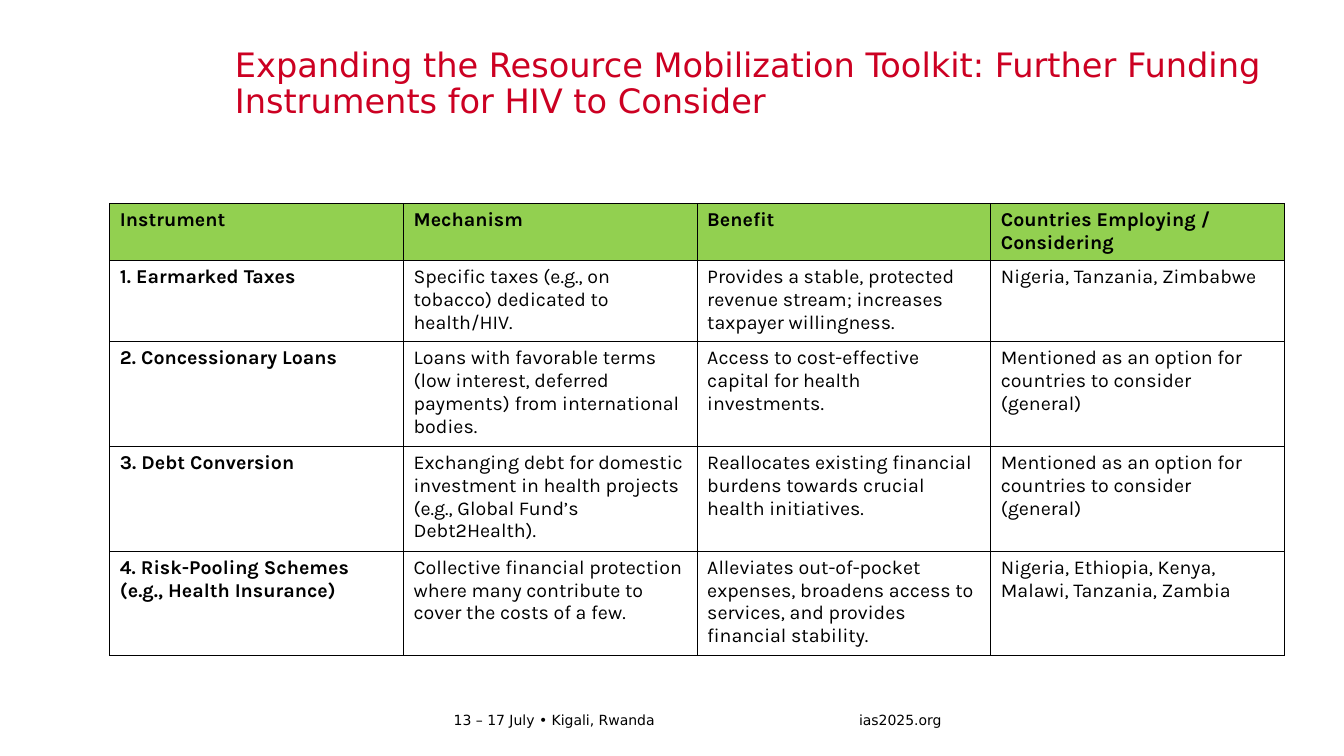
from lxml import etree
from pptx import Presentation
from pptx.dml.color import RGBColor
from pptx.enum.text import MSO_ANCHOR
from pptx.oxml.ns import qn
from pptx.util import Pt

PX = 9144  # 100 px to the inch
TOP, MIDDLE = MSO_ANCHOR.TOP, MSO_ANCHOR.MIDDLE
COLORS = {"title": "CC0022", "text": "000000", "head": "92D050", "line": "000000"}
SANS, KARLA = "DejaVu Sans", "Karla"
BORDER = Pt(0.75)

ROWS = [
    ("Instrument", "Mechanism", "Benefit", "Countries Employing / Considering"),
    ("1. Earmarked Taxes",
     "Specific taxes (e.g., on tobacco) dedicated to health/HIV.",
     "Provides a stable, protected revenue stream; increases taxpayer willingness.",
     "Nigeria, Tanzania, Zimbabwe"),
    ("2. Concessionary Loans",
     "Loans with favorable terms (low interest, deferred payments) from international bodies.",
     "Access to cost-effective capital for health investments.",
     "Mentioned as an option for countries to consider (general)"),
    ("3. Debt Conversion",
     "Exchanging debt for domestic investment in health projects "
     "(e.g., Global Fund’s Debt2Health).",
     "Reallocates existing financial burdens towards crucial health initiatives.",
     "Mentioned as an option for countries to consider (general)"),
    ("4. Risk-Pooling Schemes (e.g., Health Insurance)",
     "Collective financial protection where many contribute to cover the costs of a few.",
     "Alleviates out-of-pocket expenses, broadens access to services, "
     "and provides financial stability.",
     "Nigeria, Ethiopia, Kenya, Malawi, Tanzania, Zambia"),
]
HEIGHTS = (56, 78, 104, 104, 104)


def scale(*sizes):
    return [size * PX for size in sizes]


def style(para, face, size, color, bold=False):
    font = para.font
    font.name, font.size, font.bold = face, Pt(size), bold
    font.color.rgb = RGBColor.from_string(COLORS[color])


def add_text(slide, box, text, size, color, anchor):
    frame = slide.shapes.add_textbox(*scale(*box)).text_frame
    frame.word_wrap = True
    frame.vertical_anchor = anchor
    frame.margin_left = frame.margin_right = 0
    frame.margin_top = frame.margin_bottom = 0
    para = frame.paragraphs[0]
    para.text = text
    style(para, SANS, size, color)
    return para


def add_title(slide, box):
    para = add_text(slide, box,
                    "Expanding the Resource Mobilization Toolkit: "
                    "Further Funding Instruments for HIV to Consider",
                    24, "title", TOP)
    para.line_spacing = 0.9


def add_footer(slide, box):
    left, top, width, height = box
    split = 402
    add_text(slide, (left, top, split, height),
             "13 – 17 July • Kigali, Rwanda", 10, "text", MIDDLE)
    add_text(slide, (left + split, top, width - split, height),
             "ias2025.org", 10, "text", MIDDLE)


def add_border(cell):
    props = cell._tc.get_or_add_tcPr()
    for side in ("a:lnL", "a:lnR", "a:lnT", "a:lnB"):
        line = etree.SubElement(props, qn(side), w=str(BORDER))
        fill = etree.SubElement(line, qn("a:solidFill"))
        etree.SubElement(fill, qn("a:srgbClr"), val=COLORS["line"])


def fill_cell(cell, text, head, bold):
    add_border(cell)
    if head:
        cell.fill.solid()
        cell.fill.fore_color.rgb = RGBColor.from_string(COLORS["head"])
    else:
        cell.fill.background()
    para = cell.text_frame.paragraphs[0]
    para.text = text
    style(para, KARLA, 14, "text", bold)


def add_grid(slide, box):
    count = len(ROWS[0])
    table = slide.shapes.add_table(len(ROWS), count, *scale(*box)).table
    table.first_row = table.horz_banding = False
    for col in table.columns:
        col.width = box[2] * PX // count
    for r, (texts, height) in enumerate(zip(ROWS, HEIGHTS)):
        table.rows[r].height = height * PX
        for c, text in enumerate(texts):
            fill_cell(table.cell(r, c), text, r == 0, r == 0 or c == 0)


def main():
    deck = Presentation()
    deck.slide_width, deck.slide_height = scale(1333, 750)
    slide = deck.slides.add_slide(deck.slide_layouts[6])
    add_footer(slide, (450, 702, 595, 24))
    add_title(slide, (233, 48, 1052, 82))
    add_grid(slide, (109, 202, 1165, sum(HEIGHTS)))
    deck.save("out.pptx")


if __name__ == "__main__":
    main()
